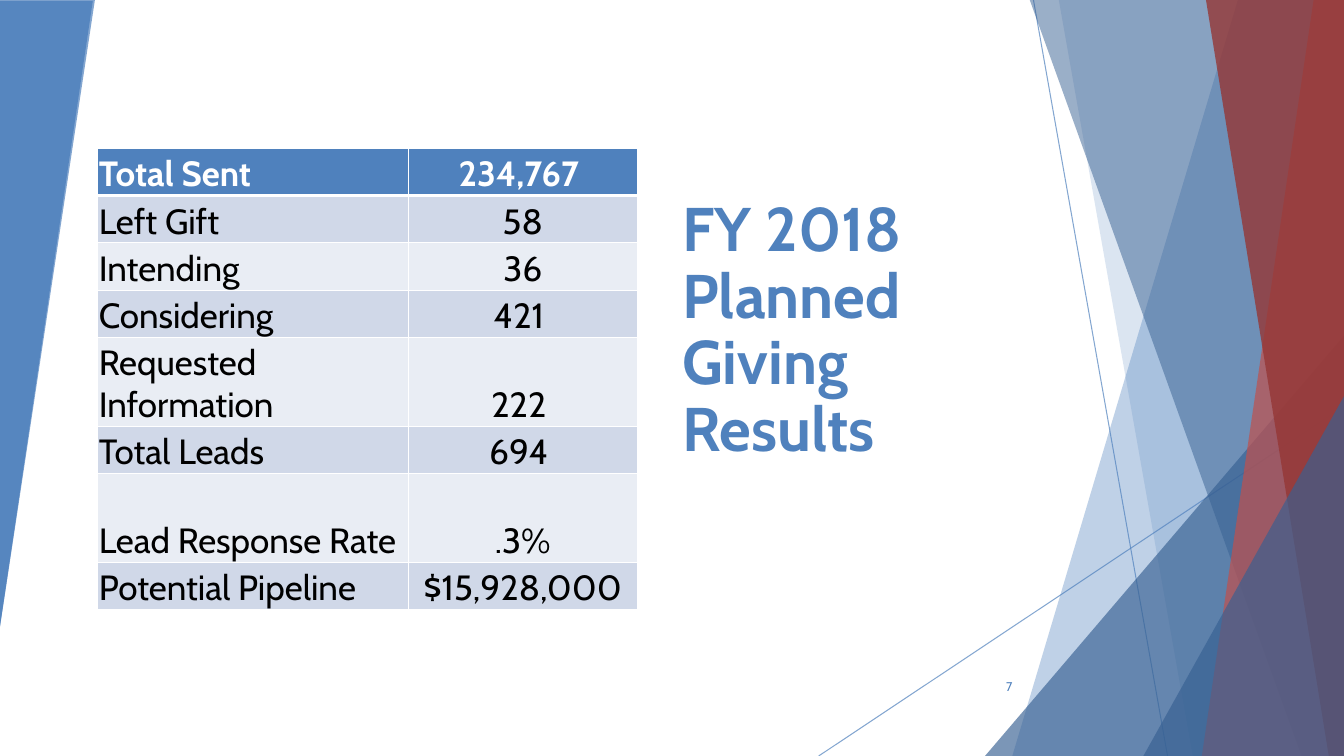
from lxml.etree import SubElement
from pptx import Presentation
from pptx.dml.color import RGBColor
from pptx.enum.shapes import MSO_CONNECTOR, MSO_SHAPE
from pptx.enum.text import MSO_ANCHOR, PP_ALIGN
from pptx.oxml.ns import qn
from pptx.util import Inches, Pt

BLUE = RGBColor(0x4F, 0x81, 0xBD)
NAVY = RGBColor(0x37, 0x60, 0x92)
RED = RGBColor(0xC0, 0x50, 0x4D)
MAROON = RGBColor(0x95, 0x37, 0x35)
BAND_DARK = RGBColor(0xD0, 0xD8, 0xE8)
BAND_LIGHT = RGBColor(0xE9, 0xED, 0xF4)
WHITE = RGBColor(0xFF, 0xFF, 0xFF)
BLACK = RGBColor(0, 0, 0)
FONT = "Cabin"
WIDTH, HEIGHT, TOP = 13.33, 7.5, -0.01

TITLE = "FY 2018 Planned Giving Results"
PAGE_NUMBER = "7"
RESULTS = [
    ("Total Sent", "234,767 "),
    ("Left Gift", "58"),
    ("Intending", "36"),
    ("Considering", "421 "),
    ("Requested Information", "222 "),
    ("Total Leads", "694 "),
    ("Lead Response Rate", ".3%"),
    ("Potential Pipeline", "$15,928,000"),
]
COLUMN_WIDTHS = (3.08, 2.27)
ROW_HEIGHT, TALL_ROW_HEIGHT = 0.47, 0.88
TALL_ROWS = (4, 6)

LEFT_WEDGE = [(0, TOP), (0.94, TOP), (0.94, 0.01), (0, 6.22)]
THIN_LINES = [((10.25, 0), (11.58, HEIGHT)), ((WIDTH, 4.03), (8.12, HEIGHT))]
RIGHT_SHARDS = [
    ("band", 12.28, 10.04, BLUE, 36),
    ("band", 10.5, 11.83, BLUE, 20),
    ("triangle", 9.77, 3.33, NAVY, 66),
    ("band", 10.21, 12.91, NAVY, 50),
    ("band", 13.03, 11.92, RED, 70),
    ("band", 11.96, 13.18, MAROON, 80),
    ("triangle", 11.34, 3.93, NAVY, 66),
]


def set_opacity(shape, percent):
    for color in shape.element.spPr.iter(qn("a:srgbClr")):
        SubElement(color, qn("a:alpha"), val=str(percent * 1000))


def paint(shape, color, opacity):
    shape.shadow.inherit = False
    shape.fill.solid()
    shape.fill.fore_color.rgb = color
    shape.line.fill.background()
    set_opacity(shape, opacity)


def add_polygon(page, points, color, opacity):
    corners = [(Inches(x), Inches(y)) for x, y in points]
    builder = page.shapes.build_freeform(*corners[0], scale=1.0)
    builder.add_line_segments(corners[1:], close=True)
    paint(builder.convert_to_shape(), color, opacity)


def add_triangle(page, left, top, width, height, color, opacity, rotation=0):
    triangle = page.shapes.add_shape(
        MSO_SHAPE.ISOSCELES_TRIANGLE, Inches(left), Inches(top), Inches(width), Inches(height))
    triangle.adjustments[0] = 1
    triangle.rotation = rotation
    paint(triangle, color, opacity)


def add_thin_line(page, start, end):
    line = page.shapes.add_connector(
        MSO_CONNECTOR.STRAIGHT, *(Inches(value) for value in start + end))
    line.line.color.rgb = BLUE
    line.line.width = Pt(0.75)
    set_opacity(line, 70)
    SubElement(line.element.spPr, qn("a:effectLst"))


def style_text(para, size, color, bold=False):
    for span in para.runs:
        span.font.name = FONT
        span.font.size = Pt(size)
        span.font.bold = bold
        span.font.color.rgb = color


def add_text(page, area, text, size, anchor, align, bold=False):
    box = page.shapes.add_textbox(*(Inches(value) for value in area))
    frame = box.text_frame
    frame.word_wrap = True
    frame.vertical_anchor = anchor
    frame.text = text
    para = frame.paragraphs[0]
    para.alignment = align
    style_text(para, size, BLUE, bold)
    return para


def add_borders(cell, is_header):
    properties = cell._tc.get_or_add_tcPr()
    for side in ("L", "R", "T", "B"):
        points = 3 if is_header and side == "B" else 1
        border = SubElement(properties, qn("a:ln" + side), w=str(Pt(points)))
        fill = SubElement(border, qn("a:solidFill"))
        SubElement(fill, qn("a:srgbClr"), val=str(WHITE))


def fill_cell(cell, text, row, column):
    is_header = row == 0
    add_borders(cell, is_header)
    cell.fill.solid()
    cell.fill.fore_color.rgb = BLUE if is_header else BAND_DARK if row % 2 else BAND_LIGHT
    cell.margin_left = cell.margin_right = cell.margin_top = Inches(0.01)
    cell.margin_bottom = 0
    cell.vertical_anchor = MSO_ANCHOR.BOTTOM
    cell.text_frame.text = text
    para = cell.text_frame.paragraphs[0]
    para.alignment = PP_ALIGN.CENTER if column else PP_ALIGN.LEFT
    style_text(para, 25, WHITE if is_header else BLACK, is_header)


def add_results_table(page):
    heights = [TALL_ROW_HEIGHT if row in TALL_ROWS else ROW_HEIGHT
               for row in range(len(RESULTS))]
    table = page.shapes.add_table(
        len(RESULTS), len(COLUMN_WIDTHS), Inches(0.97), Inches(1.47),
        Inches(sum(COLUMN_WIDTHS)), Inches(sum(heights))).table
    table.horz_banding = False
    for column, width in zip(table.columns, COLUMN_WIDTHS):
        column.width = Inches(width)
    for row, values in enumerate(RESULTS):
        table.rows[row].height = Inches(heights[row])
        for column, text in enumerate(values):
            fill_cell(table.cell(row, column), text, row, column)


def add_background(page):
    add_polygon(page, LEFT_WEDGE, BLUE, 70)
    for start, end in THIN_LINES:
        add_thin_line(page, start, end)
    for kind, first, second, color, opacity in RIGHT_SHARDS:
        if kind == "band":
            points = [(first, TOP), (WIDTH, TOP), (WIDTH, HEIGHT), (second, HEIGHT)]
            add_polygon(page, points, color, opacity)
        else:
            add_triangle(page, first, second, WIDTH - first, HEIGHT - second, color, opacity)


def main():
    deck = Presentation()
    deck.slide_width, deck.slide_height = Inches(WIDTH), Inches(HEIGHT)
    page = deck.slides.add_slide(deck.slide_layouts[6])
    add_background(page)
    title = add_text(page, (6.67, 1.38, 3.82, 3.28), TITLE, 44,
                     MSO_ANCHOR.BOTTOM, PP_ALIGN.LEFT, bold=True)
    title.line_spacing = 0.9
    title.space_after = Pt(6)
    add_triangle(page, 0, 0.01, 0.92, 6.2, BLUE, 85, rotation=180)
    number = add_text(page, (9.39, 6.61, 0.75, 0.4), PAGE_NUMBER, 9,
                      MSO_ANCHOR.MIDDLE, PP_ALIGN.RIGHT)
    number.space_after = Pt(6)
    add_results_table(page)
    deck.save("out.pptx")


if __name__ == "__main__":
    main()
